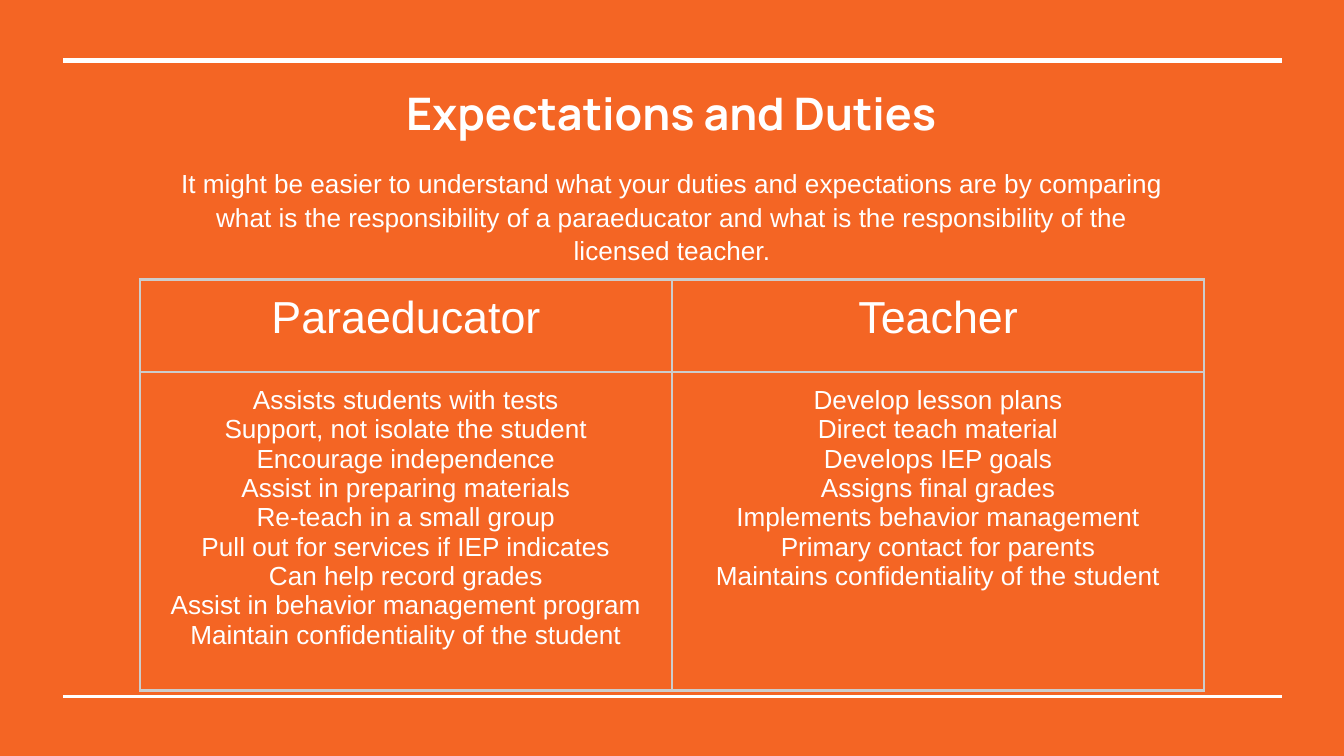
from pptx import Presentation
from pptx.dml.color import RGBColor
from pptx.enum.shapes import MSO_CONNECTOR as Connector
from pptx.enum.text import MSO_ANCHOR as Anchor, PP_ALIGN as Align
from pptx.oxml import parse_xml
from pptx.oxml.ns import nsdecls
from pptx.util import Inches, Pt

ORANGE = RGBColor(0xF4, 0x65, 0x24)
WHITE = RGBColor(0xFF, 0xFF, 0xFF)
GREY = RGBColor(0xCC, 0xCC, 0xCC)

HEADING = "Expectations and Duties"
INTRO = (
    "It might be easier to understand what your duties and expectations are by "
    "comparing what is the responsibility of a paraeducator and what is the "
    "responsibility of the licensed teacher."
)
DUTIES = {
    "Paraeducator": [
        "Assists students with tests",
        "Support, not isolate the student",
        "Encourage independence",
        "Assist in preparing materials",
        "Re-teach in a small group",
        "Pull out for services if IEP indicates",
        "Can help record grades",
        "Assist in behavior management program",
        "Maintain confidentiality of the student",
    ],
    "Teacher": [
        "Develop lesson plans",
        "Direct teach material",
        "Develops IEP goals",
        "Assigns final grades",
        "Implements behavior management",
        "Primary contact for parents",
        "Maintains confidentiality of the student",
    ],
}


def write(frame, lines, size=14, font="Arial", bold=False, spacing=1.0):
    for index, line in enumerate(lines):
        paragraph = frame.paragraphs[0] if index == 0 else frame.add_paragraph()
        paragraph.alignment = Align.CENTER
        paragraph.line_spacing = spacing
        run = paragraph.add_run()
        run.text = line
        run.font.size = Pt(size)
        run.font.name = font
        run.font.bold = bold
        run.font.color.rgb = WHITE


class DutiesSlide:
    """Draws on a slide with a square grid of 100 columns by 56.25 rows."""

    def __init__(self, deck):
        self.unit = deck.slide_width / 100
        self.margin = self.grid(1)
        self.slide = deck.slides.add_slide(deck.slide_layouts[6])
        fill = self.slide.background.fill
        fill.solid()
        fill.fore_color.rgb = ORANGE

    def grid(self, steps):
        return round(steps * self.unit)

    def pad(self, holder):
        holder.margin_left = holder.margin_right = self.margin
        holder.margin_top = holder.margin_bottom = self.margin

    def rule(self, row, weight, start=4.7, end=95.4):
        ends = [self.grid(step) for step in (start, row, end, row)]
        rule = self.slide.shapes.add_connector(Connector.STRAIGHT, *ends)
        rule.line.color.rgb = WHITE
        rule.line.width = Pt(weight)
        rule._element.spPr.append(parse_xml(f"<a:effectLst {nsdecls('a')}/>"))

    def text(self, box, content, anchor=Anchor.TOP, **style):
        frame = self.slide.shapes.add_textbox(*map(self.grid, box)).text_frame
        frame.word_wrap = True
        frame.vertical_anchor = anchor
        self.pad(frame)
        write(frame, [content], **style)

    def border(self, cell):
        properties = cell._tc.get_or_add_tcPr()
        for position, side in enumerate(("lnL", "lnR", "lnT", "lnB")):
            properties.insert(position, parse_xml(
                f'<a:{side} {nsdecls("a")} w="{Pt(1.5)}"><a:solidFill>'
                f'<a:srgbClr val="{GREY}"/></a:solidFill></a:{side}>'))

    def table(self, left, top, column_width, row_heights, columns):
        width, height = column_width * len(columns), sum(row_heights)
        box = map(self.grid, (left, top, width, height))
        table = self.slide.shapes.add_table(len(row_heights), len(columns), *box).table
        table.first_row = table.horz_banding = False
        for row, row_height in zip(table.rows, row_heights):
            row.height = self.grid(row_height)
        for index, (role, duties) in enumerate(columns.items()):
            table.columns[index].width = self.grid(column_width)
            for row, (lines, size) in enumerate((([role], 24), (duties, 14))):
                cell = table.cell(row, index)
                cell.fill.background()
                self.pad(cell)
                self.border(cell)
                write(cell.text_frame, lines, size=size)


def main():
    deck = Presentation()
    deck.slide_width, deck.slide_height = Inches(10), Inches(5.625)
    page = DutiesSlide(deck)
    page.rule(row=4.5, weight=3)
    page.rule(row=51.8, weight=1.5)
    page.text((4.6, 4.6, 90.7, 7.5), HEADING, anchor=Anchor.MIDDLE,
              size=24, font="Manrope", bold=True)
    page.text((12.4, 11.3, 75.2, 9.5), INTRO, spacing=1.07)
    page.table(10.4, 20.8, 39.6, (6.9, 23.7), DUTIES)
    deck.save("out.pptx")


if __name__ == "__main__":
    main()
